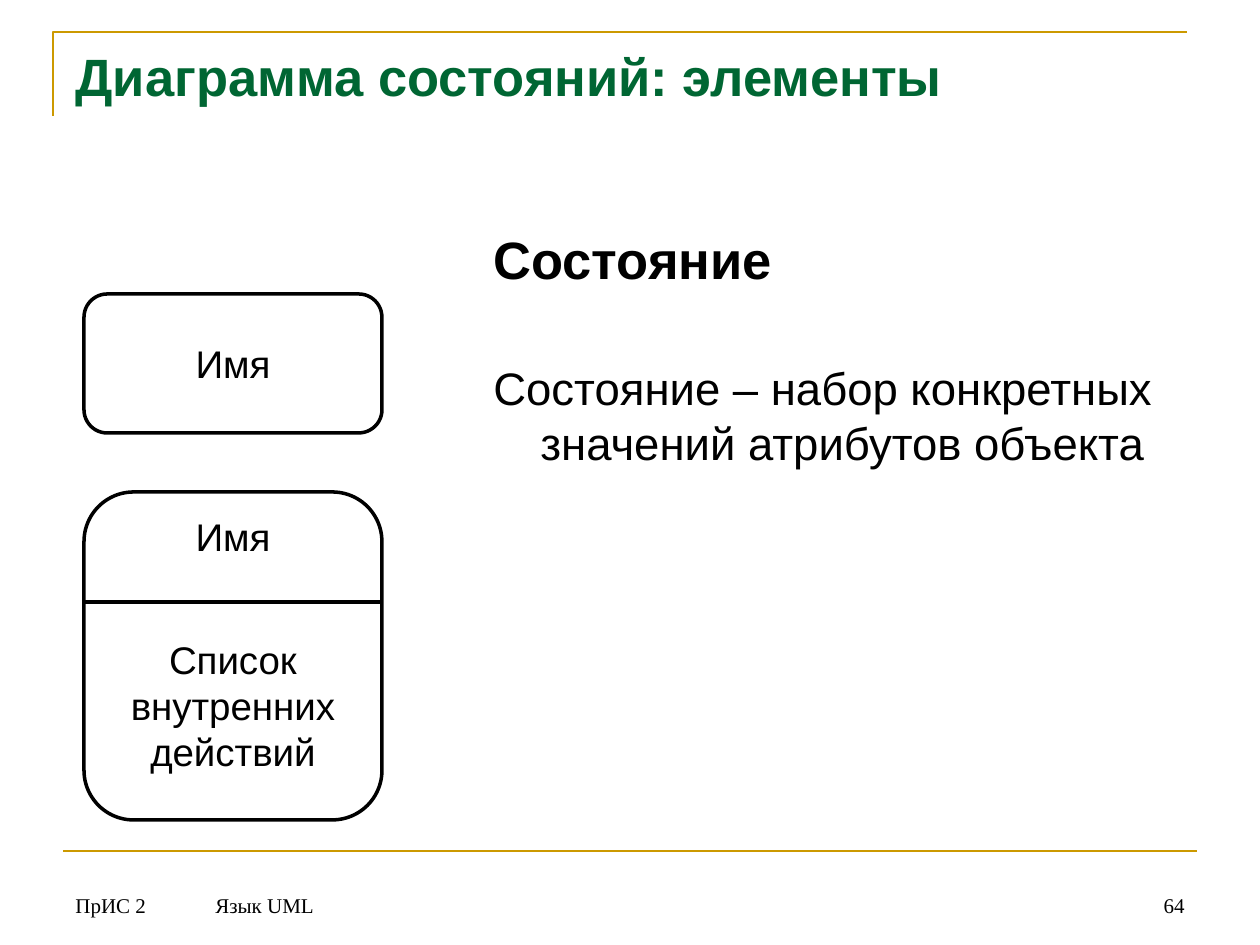
import pptx
import pptx.util
import pptx.dml.color
import pptx.enum.shapes
import pptx.enum.text
import pptx.oxml

PX = 914400 / 126
ALIGN = pptx.enum.text.PP_ALIGN
ANCHOR = pptx.enum.text.MSO_ANCHOR
SHAPES = pptx.enum.shapes
GOLD, GREEN, BLACK = "CC9900", "006633", "000000"

TITLE = "Диаграмма состояний: элементы"
DEFINITION = [
    {"text": "Состояние", "size": 30, "bold": True},
    {"text": "Состояние – набор конкретных значений атрибутов объекта",
     "size": 26, "before": 40},
]
STATES = [
    {"top": 294, "height": 139, "anchor": ANCHOR.MIDDLE,
     "lines": [{"text": "Имя"}]},
    {"top": 492, "height": 328, "anchor": ANCHOR.TOP,
     "lines": [{"text": "Имя"}, {"text": "Список", "before": 44},
               {"text": "внутренних"}, {"text": "действий"}]},
]
STATE_LEFT, STATE_WIDTH, DIVIDER_TOP = 84, 298, 602
FOOTERS = [
    ("ПрИС 2", 63, 121, ALIGN.LEFT),
    ("Язык UML", 203, 912, ALIGN.LEFT),
    ("64", 1126, 71, ALIGN.RIGHT),
]
FRAME = [(53, 116), (53, 32), (1187, 32)]


def emu(px):
    return pptx.util.Emu(round(px * PX))


def color(value):
    return pptx.dml.color.RGBColor.from_string(value)


def place(shape, *box):
    for side, px in zip(("left", "top", "width", "height"), box):
        setattr(shape, side, emu(px))


def write(shape, lines, align=ALIGN.LEFT, anchor=ANCHOR.TOP, hanging=0, **font):
    frame = shape.text_frame
    for name, value in {"word_wrap": True, "vertical_anchor": anchor,
                        "auto_size": pptx.enum.text.MSO_AUTO_SIZE.NONE}.items():
        setattr(frame, name, value)
    for number, line in enumerate(lines):
        paragraph = frame.add_paragraph() if number else frame.paragraphs[0]
        paragraph.alignment = align
        paragraph.space_before = pptx.util.Pt(line.get("before", 0))
        if hanging:
            properties = paragraph._p.get_or_add_pPr()
            properties.set("marL", str(emu(hanging)))
            properties.set("indent", str(-emu(hanging)))
        run = paragraph.add_run()
        run.text = line["text"]
        style = {"name": "Arial", "color": BLACK, "bold": False, **font, **line}
        for name in ("name", "bold"):
            setattr(run.font, name, style[name])
        run.font.size = pptx.util.Pt(style["size"])
        run.font.color.rgb = color(style["color"])


def outline(shape, value, width):
    shape.line.color.rgb = color(value)
    shape.line.width = pptx.util.Pt(width)


def add_rule(left, right, top, value, width):
    rule = slide.shapes.add_connector(
        SHAPES.MSO_CONNECTOR.STRAIGHT, emu(left), emu(top), emu(right), emu(top))
    outline(rule, value, width)
    rule._element.spPr.append(pptx.oxml.parse_xml(
        '<a:effectLst xmlns:a="http://schemas.openxmlformats.org/drawingml/2006/main"/>'))


def add_text(box, lines, **style):
    shape = slide.shapes.add_textbox(0, 0, 0, 0)
    place(shape, *box)
    write(shape, lines, **style)


deck = pptx.Presentation()
deck.slide_width, deck.slide_height = emu(1260), emu(945)
slide = deck.slides.add_slide(deck.slide_layouts[5])

builder = slide.shapes.build_freeform(*FRAME[0], scale=PX)
builder.add_line_segments(FRAME[1:], close=False)
corner = builder.convert_to_shape()
corner.shadow.inherit = False
corner.fill.background()
outline(corner, GOLD, 1.5)
add_rule(63, 1197, 851, GOLD, 1.5)

for text, left, width, align in FOOTERS:
    add_text((left, 861, width, 63), [{"text": text}], align=align,
             anchor=ANCHOR.BOTTOM, name="Times New Roman", size=12)

title = slide.shapes.title
place(title, 63, 38, 1134, 158)
write(title, [{"text": TITLE}], size=30, bold=True, color=GREEN)
add_text((481, 221, 716, 624), DEFINITION, hanging=47)

for state in STATES:
    shape = slide.shapes.add_shape(SHAPES.MSO_SHAPE.ROUNDED_RECTANGLE, 0, 0, 0, 0)
    place(shape, STATE_LEFT, state["top"], STATE_WIDTH, state["height"])
    shape.shadow.inherit = False
    shape.fill.background()
    outline(shape, BLACK, 2)
    write(shape, state["lines"], align=ALIGN.CENTER, anchor=state["anchor"], size=22)
add_rule(STATE_LEFT, STATE_LEFT + STATE_WIDTH, DIVIDER_TOP, BLACK, 2)

deck.save("out.pptx")
